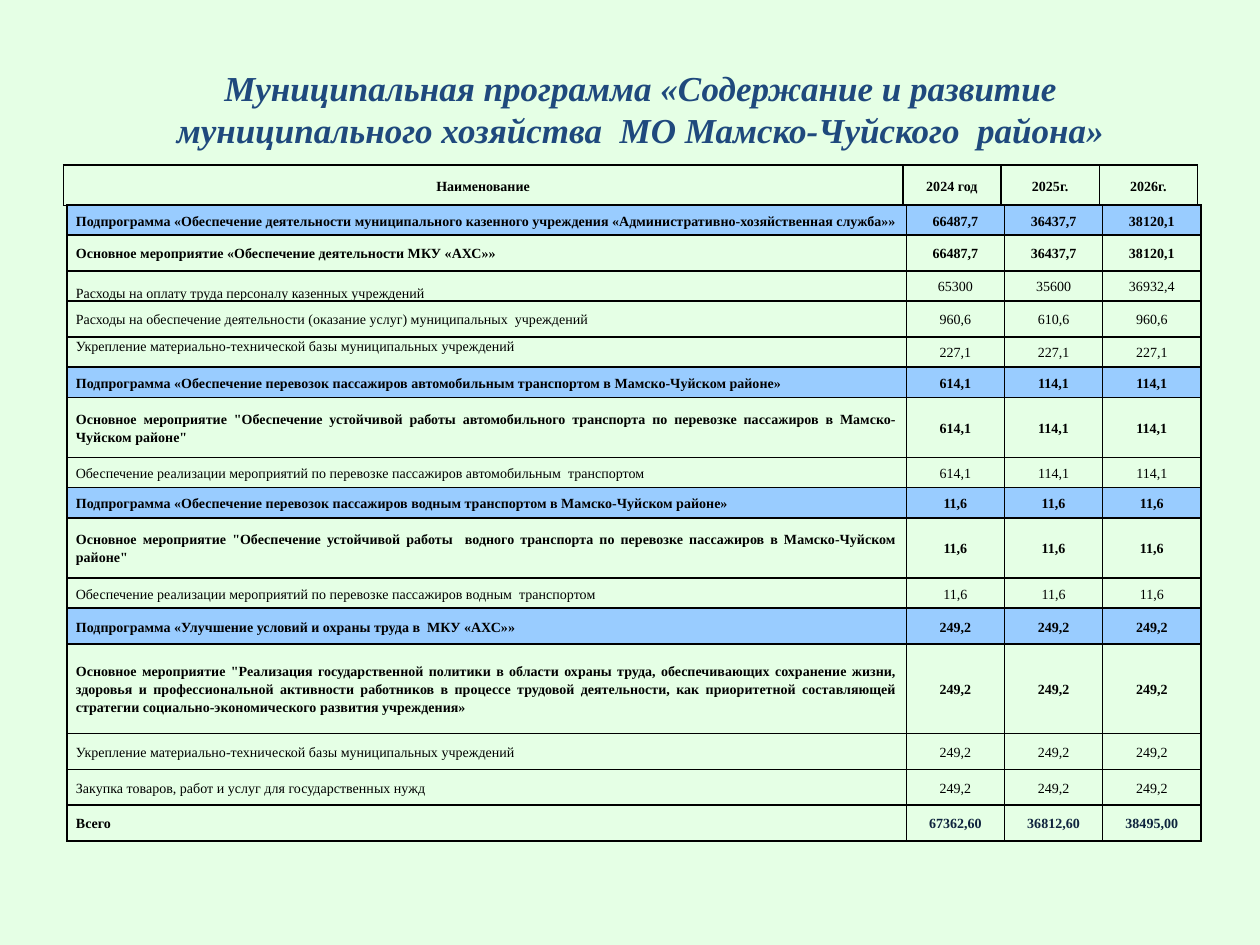
"""Build the slide with the municipal programme's budget table."""
import pptx
import pptx.dml.color
import pptx.enum.text
import pptx.oxml
import pptx.oxml.ns
import pptx.util

Cm, Pt = pptx.util.Cm, pptx.util.Pt
Align = pptx.enum.text.PP_ALIGN
Anchor = pptx.enum.text.MSO_ANCHOR

FONT = "Times New Roman"
COLOURS = {"back": "E5FFE5", "title": "1F497D", "text": "000000",
           "sum": "0F243E", "band": "99CCFF", "line": "000000"}
WIDTHS = [16.92, 1.98, 1.98, 1.98]
TITLE = ("Муниципальная программа «Содержание и развитие "
         "муниципального хозяйства  МО Мамско-Чуйского  района»")
HEAD = [("head", 0.81, "Наименование", "2024 год", "2025г.", "2026г.")]
BASE = "Укрепление материально-технической базы муниципальных учреждений"
ROWS = [
    ("sub", 0.61, "Подпрограмма «Обеспечение деятельности муниципального казенного "
     "учреждения «Административно-хозяйственная служба»»",
     "66487,7", "36437,7", "38120,1"),
    ("main", 0.72, "Основное мероприятие «Обеспечение деятельности МКУ «АХС»»",
     "66487,7", "36437,7", "38120,1"),
    ("low", 0.61, "Расходы на оплату труда персоналу казенных учреждений",
     "65300", "35600", "36932,4"),
    ("item", 0.72, "Расходы на обеспечение деятельности (оказание услуг) "
     "муниципальных  учреждений", "960,6", "610,6", "960,6"),
    ("high", 0.61, BASE, "227,1", "227,1", "227,1"),
    ("sub", 0.61, "Подпрограмма «Обеспечение перевозок пассажиров автомобильным "
     "транспортом в Мамско-Чуйском районе»", "614,1", "114,1", "114,1"),
    ("long", 1.21, 'Основное мероприятие "Обеспечение устойчивой работы автомобильного '
     'транспорта по перевозке пассажиров в Мамско-Чуйском районе"',
     "614,1", "114,1", "114,1"),
    ("item", 0.61, "Обеспечение реализации мероприятий по перевозке пассажиров "
     "автомобильным  транспортом", "614,1", "114,1", "114,1"),
    ("sub", 0.61, "Подпрограмма «Обеспечение перевозок пассажиров водным "
     "транспортом в Мамско-Чуйском районе»", "11,6", "11,6", "11,6"),
    ("long", 1.21, 'Основное мероприятие "Обеспечение устойчивой работы  водного '
     'транспорта по перевозке пассажиров в Мамско-Чуйском районе"',
     "11,6", "11,6", "11,6"),
    ("item", 0.61, "Обеспечение реализации мероприятий по перевозке пассажиров "
     "водным  транспортом", "11,6", "11,6", "11,6"),
    ("sub", 0.72, "Подпрограмма «Улучшение условий и охраны труда в  МКУ «АХС»»",
     "249,2", "249,2", "249,2"),
    ("long", 1.81, 'Основное мероприятие "Реализация государственной политики в области '
     "охраны труда, обеспечивающих сохранение жизни, здоровья и профессиональной "
     "активности работников в процессе трудовой деятельности, как приоритетной "
     "составляющей стратегии социально-экономического развития учреждения»",
     "249,2", "249,2", "249,2"),
    ("item", 0.72, BASE, "249,2", "249,2", "249,2"),
    ("item", 0.72, "Закупка товаров, работ и услуг для государственных нужд",
     "249,2", "249,2", "249,2"),
    ("sum", 0.72, "Всего", "67362,60", "36812,60", "38495,00"),
]


def paint(colour, name):
    """Set a colour from the palette."""
    colour.rgb = pptx.dml.color.RGBColor.from_string(COLOURS[name])


def style(par, size, name, bold, align):
    """Format a paragraph and its runs."""
    par.alignment = align
    for run in par.runs:
        run.font.name = FONT
        run.font.size = Pt(size)
        run.font.bold = bold
        paint(run.font.color, name)


def border(cell):
    """Draw thin lines on all four sides of a cell."""
    props = cell._tc.get_or_add_tcPr()
    for side in ("lnL", "lnR", "lnT", "lnB"):
        props.append(pptx.oxml.parse_xml(
            f'<a:{side} {pptx.oxml.ns.nsdecls("a")} w="{Pt(1)}"><a:solidFill>'
            f'<a:srgbClr val="{COLOURS["line"]}"/></a:solidFill></a:{side}>'))


def fill_cell(cell, text, kind, col):
    """Write one cell in the manner of its row."""
    border(cell)
    if kind == "sub":
        cell.fill.solid()
        paint(cell.fill.fore_color, "band")
    else:
        cell.fill.background()
    cell.margin_left = cell.margin_right = Cm(0.18)
    cell.margin_top = cell.margin_bottom = 0
    cell.vertical_anchor = Anchor.MIDDLE
    align = Align.CENTER
    if col == 0:
        anchors = {"low": Anchor.BOTTOM, "high": Anchor.TOP}
        cell.vertical_anchor = anchors.get(kind, Anchor.MIDDLE)
        aligns = {"head": Align.CENTER, "long": Align.JUSTIFY}
        align = aligns.get(kind, Align.LEFT)
    cell.text_frame.text = text
    par = cell.text_frame.paragraphs[0]
    par.line_spacing = 1.15
    name = "sum" if kind == "sum" and col else "text"
    style(par, 8, name, kind not in ("item", "low", "high"), align)


def add_grid(slide, left, top, rows):
    """Add a table of the given rows."""
    high = sum(row[1] for row in rows)
    table = slide.shapes.add_table(len(rows), len(WIDTHS), Cm(left), Cm(top),
                                   Cm(sum(WIDTHS)), Cm(high)).table
    table.first_row = table.horz_banding = False
    for column, width in zip(table.columns, WIDTHS):
        column.width = Cm(width)
    for line, (kind, height, *texts) in zip(table.rows, rows):
        line.height = Cm(height)
        for col, text in enumerate(texts):
            fill_cell(line.cells[col], text, kind, col)


def add_title(slide):
    """Add the centred heading."""
    frame = slide.shapes.add_textbox(Cm(1.7), Cm(1.22), Cm(22.43), Cm(1.96)).text_frame
    frame.word_wrap = True
    frame.text = TITLE
    par = frame.paragraphs[0]
    style(par, 20, "title", True, Align.CENTER)
    par.runs[0].font.italic = True


def main():
    """Build and save the slide."""
    deck = pptx.Presentation()
    deck.slide_width, deck.slide_height = Cm(25.4), Cm(19.05)
    slide = deck.slides.add_slide(deck.slide_layouts[6])
    back = slide.background.fill
    back.solid()
    paint(back.fore_color, "back")
    add_title(slide)
    add_grid(slide, 1.35, 4.13, ROWS)
    add_grid(slide, 1.28, 3.33, HEAD)
    deck.save("out.pptx")


if __name__ == "__main__":
    main()
